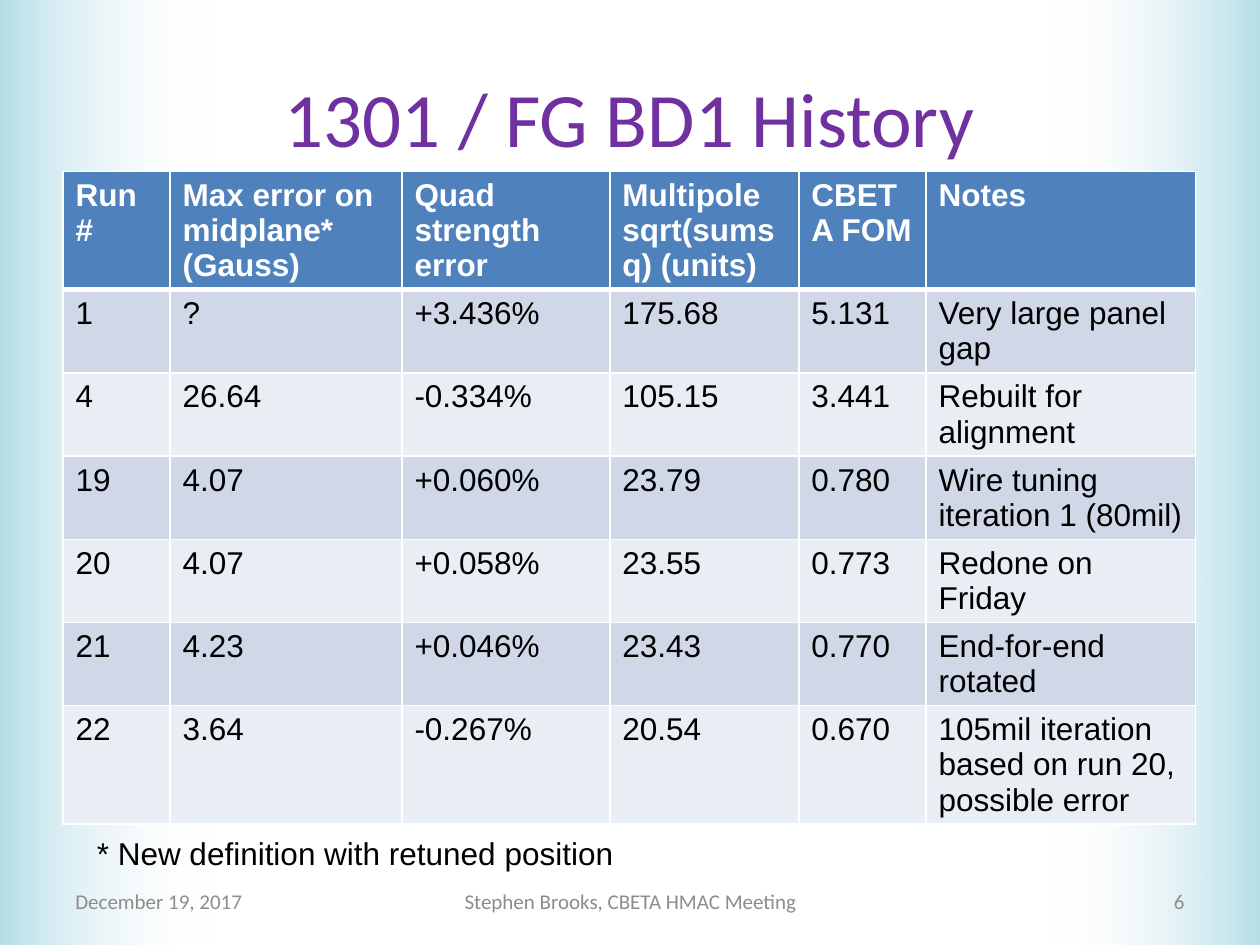
from lxml.etree import SubElement
from pptx import Presentation
from pptx.dml.color import RGBColor
from pptx.enum.shapes import MSO_SHAPE as Shape
from pptx.enum.text import MSO_ANCHOR as Anchor, MSO_AUTO_SIZE as AutoSize, PP_ALIGN as Align
from pptx.oxml.ns import qn
from pptx.util import Inches, Pt

AQUA = RGBColor(0xB7, 0xDE, 0xE8)
WHITE = RGBColor(0xFF, 0xFF, 0xFF)
BLACK = RGBColor(0, 0, 0)
PURPLE = RGBColor(0x70, 0x30, 0xA0)
GREY = RGBColor(0x8C, 0x8C, 0x8C)
HEADER_BLUE = RGBColor(0x4F, 0x81, 0xBD)
BANDS = (RGBColor(0xE9, 0xED, 0xF4), RGBColor(0xD0, 0xD8, 0xE8))

COLUMN_WIDTHS = (0.85, 1.84, 1.65, 1.5, 1.01, 2.14)
ROW_HEIGHTS = (0.94, 0.66, 0.66, 0.66, 0.66, 0.66, 0.94)
RUN_HISTORY = (
    ("Run #", "Max error on midplane* (Gauss)", "Quad strength error",
     "Multipole sqrt(sumsq) (units)", "CBETA FOM", "Notes"),
    ("1", "?", "+3.436%", "175.68", "5.131", "Very large panel gap"),
    ("4", "26.64", "-0.334%", "105.15", "3.441", "Rebuilt for alignment"),
    ("19", "4.07", "+0.060%", "23.79", "0.780", "Wire tuning iteration 1 (80mil)"),
    ("20", "4.07", "+0.058%", "23.55", "0.773", "Redone on Friday"),
    ("21", "4.23", "+0.046%", "23.43", "0.770", "End-for-end rotated"),
    ("22", "3.64", "-0.267%", "20.54", "0.670",
     "105mil iteration based on run 20, possible error"),
)


def write(frame, text, size, color, font="Arial", align=Align.LEFT, bold=False):
    """Write one formatted run into the first paragraph of a text frame."""
    para = frame.paragraphs[0]
    para.alignment = align
    span = para.add_run()
    span.text = text
    span.font.name = font
    span.font.size = Pt(size)
    span.font.bold = bold
    span.font.color.rgb = color


def add_side_fade(page, box, rotation):
    """Place a strip behind the content that fades from aqua to clear."""
    strip = page.shapes.add_shape(Shape.RECTANGLE, *map(Inches, box))
    strip.rotation = rotation
    strip.shadow.inherit = False
    strip.line.fill.background()
    strip.fill.gradient()
    strip.fill.gradient_angle = 0
    for stop, color in zip(strip.fill.gradient_stops, (AQUA, WHITE)):
        stop.color.rgb = color
    clear_color = strip.element.spPr.findall(".//" + qn("a:srgbClr"))[-1]
    SubElement(clear_color, qn("a:alpha"), val="0")
    page.shapes.element.insert(2, strip.element)


def set_title(page, box, text):
    """Move the title placeholder into its box and write the title."""
    title = page.shapes.title
    title.left, title.top, title.width, title.height = map(Inches, box)
    title.text_frame.vertical_anchor = Anchor.MIDDLE
    write(title.text_frame, text, 44, PURPLE, "Calibri", Align.CENTER)


def set_borders(cell, bottom):
    """Draw white cell borders, with a given bottom and top width in points."""
    properties = cell._tc.get_or_add_tcPr()
    for index, (side, width) in enumerate(zip(("lnL", "lnR", "lnT", "lnB"), (1, 1, 1, bottom))):
        line = properties.makeelement(qn("a:" + side), {"w": str(Pt(width))})
        fill = SubElement(line, qn("a:solidFill"))
        SubElement(fill, qn("a:srgbClr"), val=str(WHITE))
        properties.insert(index, line)


def add_history_table(page, left, top):
    """Place the run history table with a header row and banded body rows."""
    table = page.shapes.add_table(
        len(RUN_HISTORY), len(COLUMN_WIDTHS), Inches(left), Inches(top),
        Inches(sum(COLUMN_WIDTHS)), Inches(sum(ROW_HEIGHTS))).table
    for column, width in zip(table.columns, COLUMN_WIDTHS):
        column.width = Inches(width)
    for row_index, (row, height) in enumerate(zip(table.rows, ROW_HEIGHTS)):
        row.height = Inches(height)
        header = row_index == 0
        for cell, text in zip(row.cells, RUN_HISTORY[row_index]):
            cell.fill.solid()
            cell.fill.fore_color.rgb = HEADER_BLUE if header else BANDS[row_index % 2]
            set_borders(cell, 3 if header else 1)
            write(cell.text_frame, text, 18, WHITE if header else BLACK, bold=header)


def add_footer(page, top, height):
    """Place the date, the meeting and the page number along the bottom."""
    parts = (
        (0.5, 2.33, "December 19, 2017", Align.LEFT),
        (3.42, 3.17, "Stephen Brooks, CBETA HMAC Meeting", Align.CENTER),
        (7.17, 2.33, "6", Align.RIGHT),
    )
    for left, width, text, align in parts:
        box = page.shapes.add_textbox(*map(Inches, (left, top, width, height)))
        box.text_frame.word_wrap = True
        box.text_frame.vertical_anchor = Anchor.MIDDLE
        write(box.text_frame, text, 12, GREY, "Calibri", align)


def add_footnote(page, box, text):
    """Place the note that explains the starred column."""
    note = page.shapes.add_textbox(*map(Inches, box))
    note.text_frame.word_wrap = False
    note.text_frame.auto_size = AutoSize.SHAPE_TO_FIT_TEXT
    write(note.text_frame, text, 18, BLACK)


def main():
    """Build the slide and save the deck."""
    deck = Presentation()
    deck.slide_width, deck.slide_height = Inches(10), Inches(7.5)
    page = deck.slides.add_slide(deck.slide_layouts[5])
    add_side_fade(page, (0, 0, 1.69, 7.5), 0)
    add_side_fade(page, (8.31, 0, 1.69, 7.5), 180)
    set_title(page, (0.5, 0.3, 9, 1.25), "1301 / FG BD1 History")
    add_history_table(page, 0.5, 1.36)
    add_footer(page, 6.95, 0.4)
    add_footnote(page, (0.67, 6.57, 4.34, 0.4), "* New definition with retuned position")
    deck.save("out.pptx")


if __name__ == "__main__":
    main()
